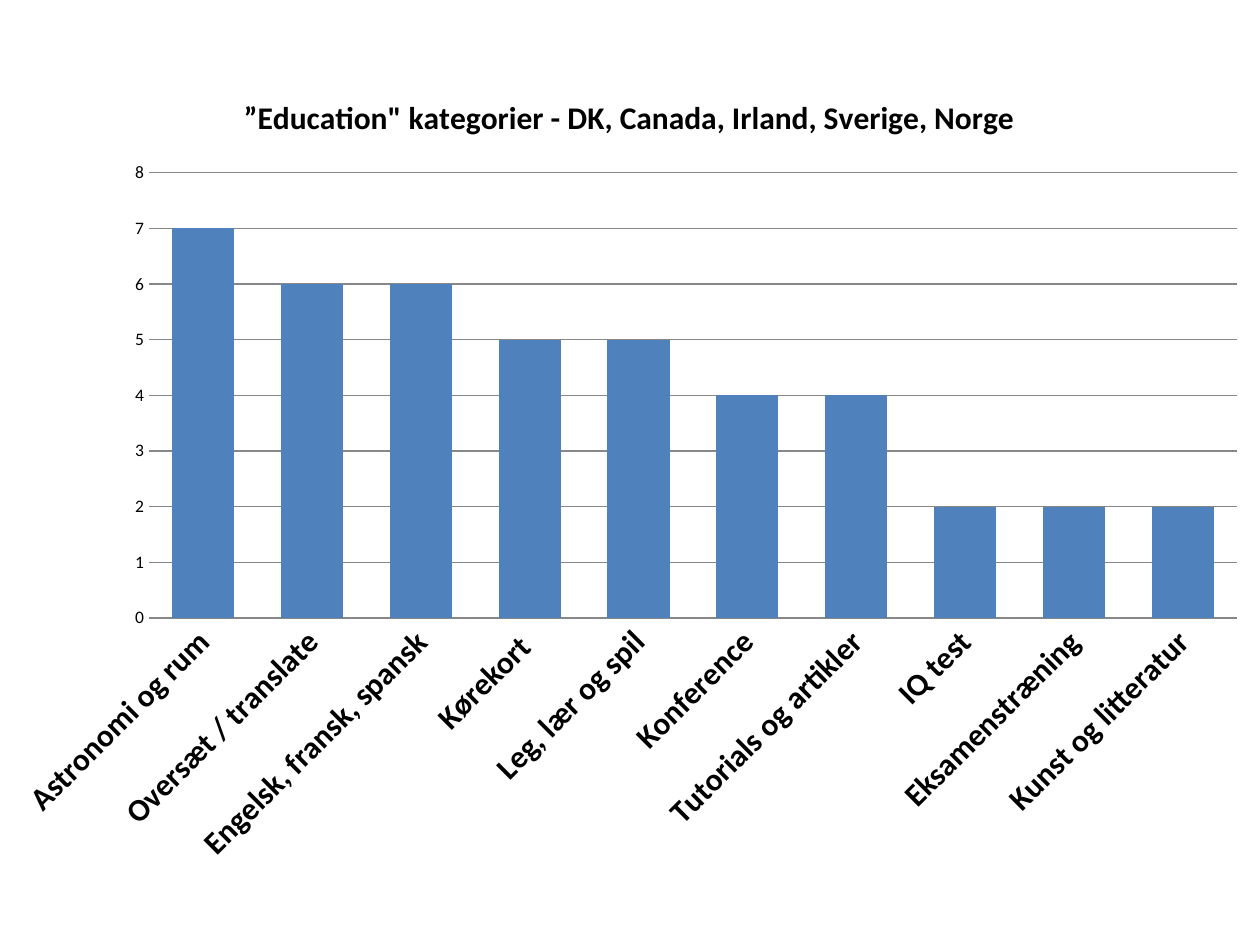
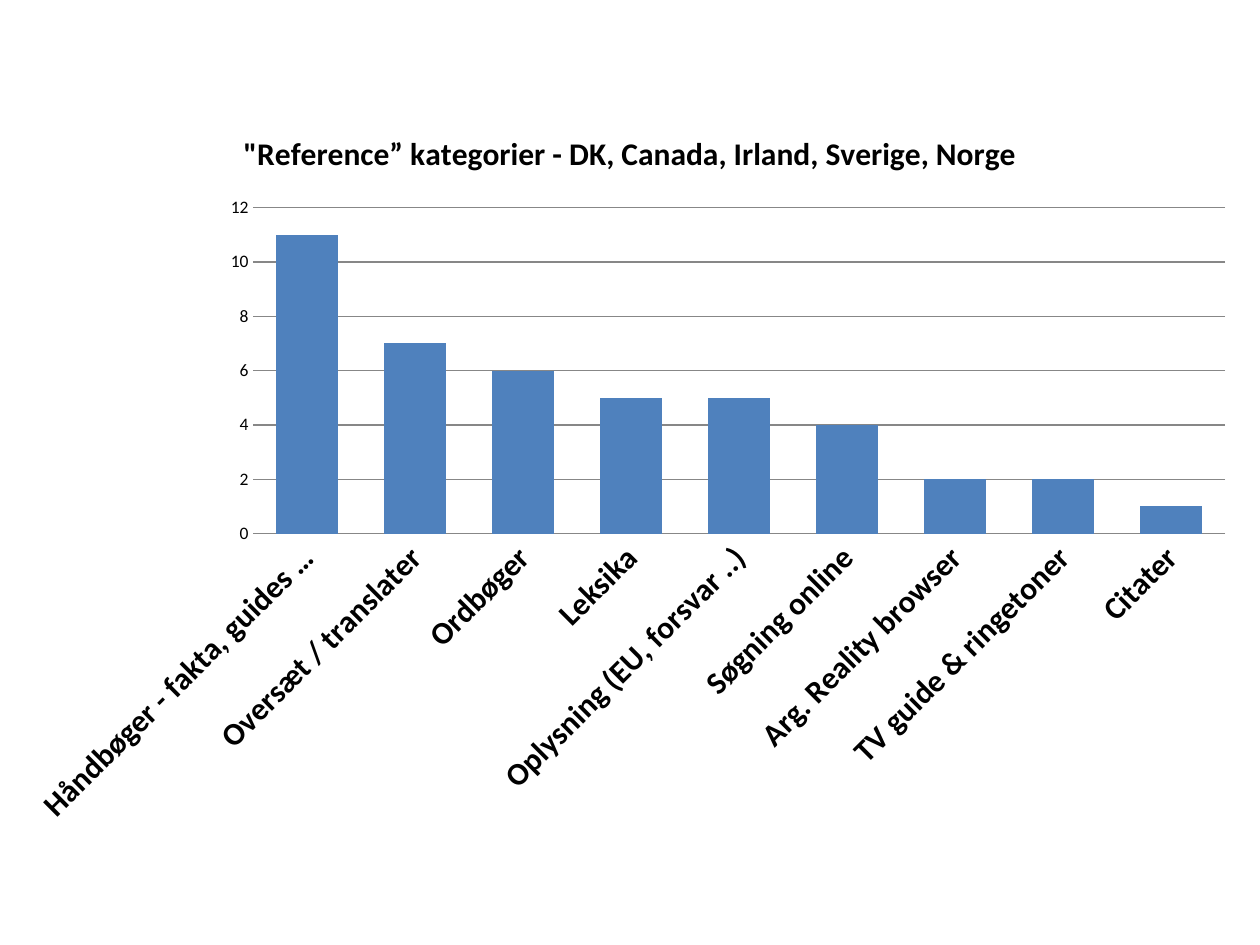
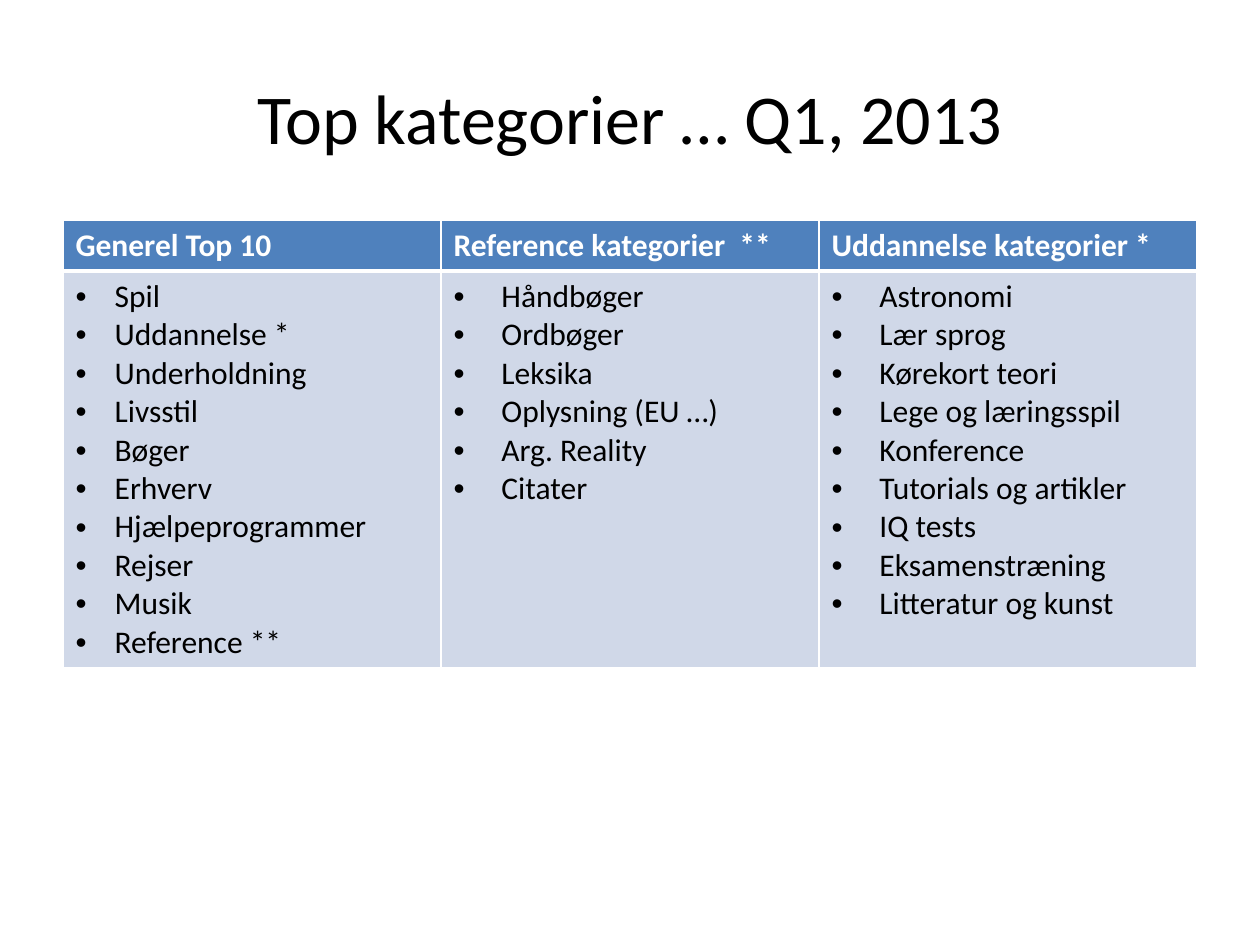
import dataclasses

import lxml.etree
import pptx
import pptx.chart.data
import pptx.dml.color
import pptx.enum.chart
import pptx.enum.text
import pptx.oxml.ns
import pptx.util

Inches = pptx.util.Inches
Pt = pptx.util.Pt
RGBColor = pptx.dml.color.RGBColor
qn = pptx.oxml.ns.qn


@dataclasses.dataclass(frozen=True)
class Theme:
    font: str = "Calibri"
    text: RGBColor = RGBColor.from_string("000000")
    inverse: RGBColor = RGBColor.from_string("FFFFFF")
    accent: RGBColor = RGBColor.from_string("4F81BD")
    pale: RGBColor = RGBColor.from_string("D0D8E8")
    grid: RGBColor = RGBColor.from_string("878787")
    title_size: Pt = Pt(40)
    body_size: Pt = Pt(18)
    value_size: Pt = Pt(10)


THEME = Theme()

EDUCATION = {
    "Astronomi og rum": 7,
    "Oversæt / translate": 6,
    "Engelsk, fransk, spansk": 6,
    "Kørekort ": 5,
    "Leg, lær og spil": 5,
    "Konference": 4,
    "Tutorials og artikler": 4,
    "IQ test": 2,
    "Eksamenstræning": 2,
    "Kunst og litteratur": 2,
}
REFERENCE = {
    "Håndbøger - fakta, guides …": 11,
    "Oversæt / translater": 7,
    "Ordbøger": 6,
    "Leksika": 5,
    "Oplysning (EU, forsvar ..)": 5,
    "Søgning online": 4,
    "Arg. Reality browser": 2,
    "TV guide & ringetoner": 2,
    "Citater": 1,
}
# Heading, bullet indent in inches, items
TOP_CATEGORIES = [
    ("Generel Top 10", 0.31,
     ["Spil", "Uddannelse *", "Underholdning", "Livsstil", "Bøger", "Erhverv",
      "Hjælpeprogrammer", "Rejser", "Musik", "Reference **"]),
    ("Reference kategorier  **", 0.38,
     ["Håndbøger", "Ordbøger", "Leksika", "Oplysning (EU …)", "Arg. Reality",
      "Citater"]),
    ("Uddannelse kategorier *", 0.38,
     ["Astronomi", "Lær sprog", "Kørekort teori", "Lege og læringsspil",
      "Konference", "Tutorials og artikler", "IQ tests", "Eksamenstræning",
      "Litteratur og kunst"]),
]


def add_blank_slide(presentation):
    return presentation.slides.add_slide(presentation.slide_layouts[6])


def style_font(font, size, color=THEME.text, bold=False):
    font.name = THEME.font
    font.size = size
    font.bold = bold
    font.color.rgb = color


def style_line(line):
    line.color.rgb = THEME.grid
    line.width = Pt(0.75)


def add_category_chart(slide, title, counts, left, top, width, height):
    data = pptx.chart.data.CategoryChartData()
    data.categories = counts.keys()
    data.add_series("Series 1", counts.values())
    chart = slide.shapes.add_chart(
        pptx.enum.chart.XL_CHART_TYPE.COLUMN_CLUSTERED,
        Inches(left), Inches(top), Inches(width), Inches(height), data).chart
    style_font(chart.font, THEME.value_size)
    chart.has_legend = False

    chart.has_title = True
    chart.chart_title.include_in_layout = False
    title_paragraph = chart.chart_title.text_frame.paragraphs[0]
    title_paragraph.text = title
    style_font(title_paragraph.font, THEME.body_size, bold=True)

    plot = chart.plots[0]
    plot.gap_width = 75
    plot.vary_by_categories = False
    fill = plot.series[0].format.fill
    fill.solid()
    fill.fore_color.rgb = THEME.accent

    for axis in (chart.category_axis, chart.value_axis):
        axis.major_tick_mark = pptx.enum.chart.XL_TICK_MARK.NONE
        axis.minor_tick_mark = pptx.enum.chart.XL_TICK_MARK.NONE
    style_line(chart.category_axis.format.line)
    style_font(chart.category_axis.tick_labels.font, THEME.body_size, bold=True)
    label_body = chart.category_axis._element.find(".//" + qn("a:bodyPr"))
    label_body.set("rot", str(-45 * 60000))
    chart.value_axis.format.line.fill.background()
    chart.value_axis.has_major_gridlines = True
    style_line(chart.value_axis.major_gridlines.format.line)


def add_title(slide, text):
    box = slide.shapes.add_textbox(Inches(0.5), Inches(0.3), Inches(9), Inches(1.25))
    frame = box.text_frame
    frame.word_wrap = True
    frame.vertical_anchor = pptx.enum.text.MSO_ANCHOR.MIDDLE
    paragraph = frame.paragraphs[0]
    paragraph.text = text
    paragraph.alignment = pptx.enum.text.PP_ALIGN.CENTER
    style_font(paragraph.font, THEME.title_size)


def add_bullet(paragraph, indent):
    properties = paragraph._p.get_or_add_pPr()
    properties.set("marL", str(Inches(indent)))
    properties.set("indent", str(-Inches(indent)))
    lxml.etree.SubElement(properties, qn("a:buFont"), typeface="Arial")
    lxml.etree.SubElement(properties, qn("a:buChar"), char="•")


def style_cell(cell, color, top=1, bottom=1):
    """Fill the cell and draw white borders; top and bottom are in points."""
    properties = cell._tc.get_or_add_tcPr()
    for side, width in (("L", 1), ("R", 1), ("T", top), ("B", bottom)):
        line = lxml.etree.SubElement(properties, qn(f"a:ln{side}"), w=str(Pt(width)))
        fill = lxml.etree.SubElement(line, qn("a:solidFill"))
        lxml.etree.SubElement(fill, qn("a:srgbClr"), val=str(THEME.inverse))
    cell.fill.solid()
    cell.fill.fore_color.rgb = color


def add_category_table(slide, columns):
    table = slide.shapes.add_table(
        2, len(columns), Inches(0.5), Inches(1.75), Inches(9), Inches(3.55)).table
    table.rows[0].height = Inches(0.4)
    table.rows[1].height = Inches(3.15)
    for index, (heading, indent, items) in enumerate(columns):
        heading_cell, items_cell = table.cell(0, index), table.cell(1, index)
        style_cell(heading_cell, THEME.accent, bottom=3)
        style_cell(items_cell, THEME.pale, top=3)
        heading_cell.text = heading
        style_font(heading_cell.text_frame.paragraphs[0].font,
                   THEME.body_size, THEME.inverse, bold=True)
        items_cell.text = "\n".join(items)
        for paragraph in items_cell.text_frame.paragraphs:
            add_bullet(paragraph, indent)
            style_font(paragraph.font, THEME.body_size)


def main():
    presentation = pptx.Presentation()
    presentation.slide_width = Inches(10)
    presentation.slide_height = Inches(7.5)

    add_category_chart(
        add_blank_slide(presentation),
        "”Education\" kategorier - DK, Canada, Irland, Sverige, Norge",
        EDUCATION, -0.03, 0.53, 10.05, 6.44)
    add_category_chart(
        add_blank_slide(presentation),
        "\"Reference” kategorier - DK, Canada, Irland, Sverige, Norge",
        REFERENCE, 0.08, 0.83, 9.84, 5.83)

    table_slide = add_blank_slide(presentation)
    add_title(table_slide, "Top kategorier … Q1, 2013")
    add_category_table(table_slide, TOP_CATEGORIES)

    presentation.save("out.pptx")


if __name__ == "__main__":
    main()
